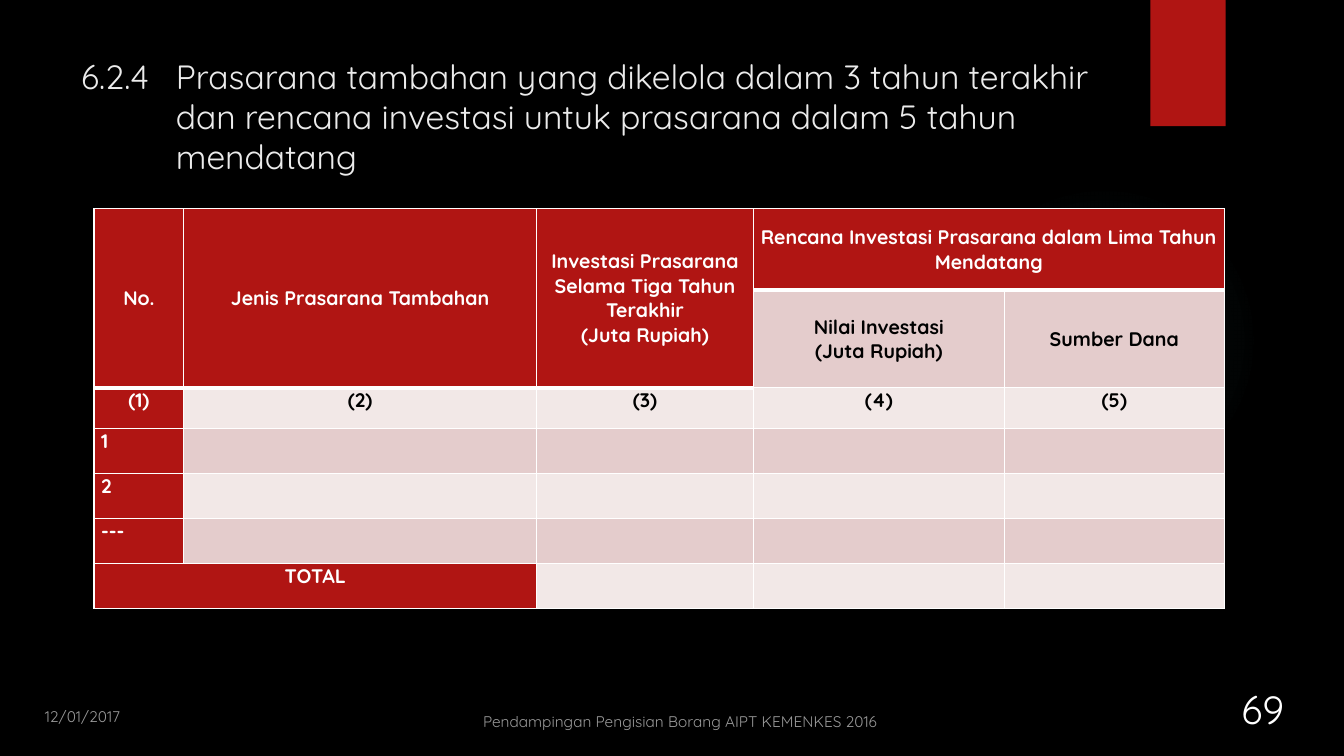
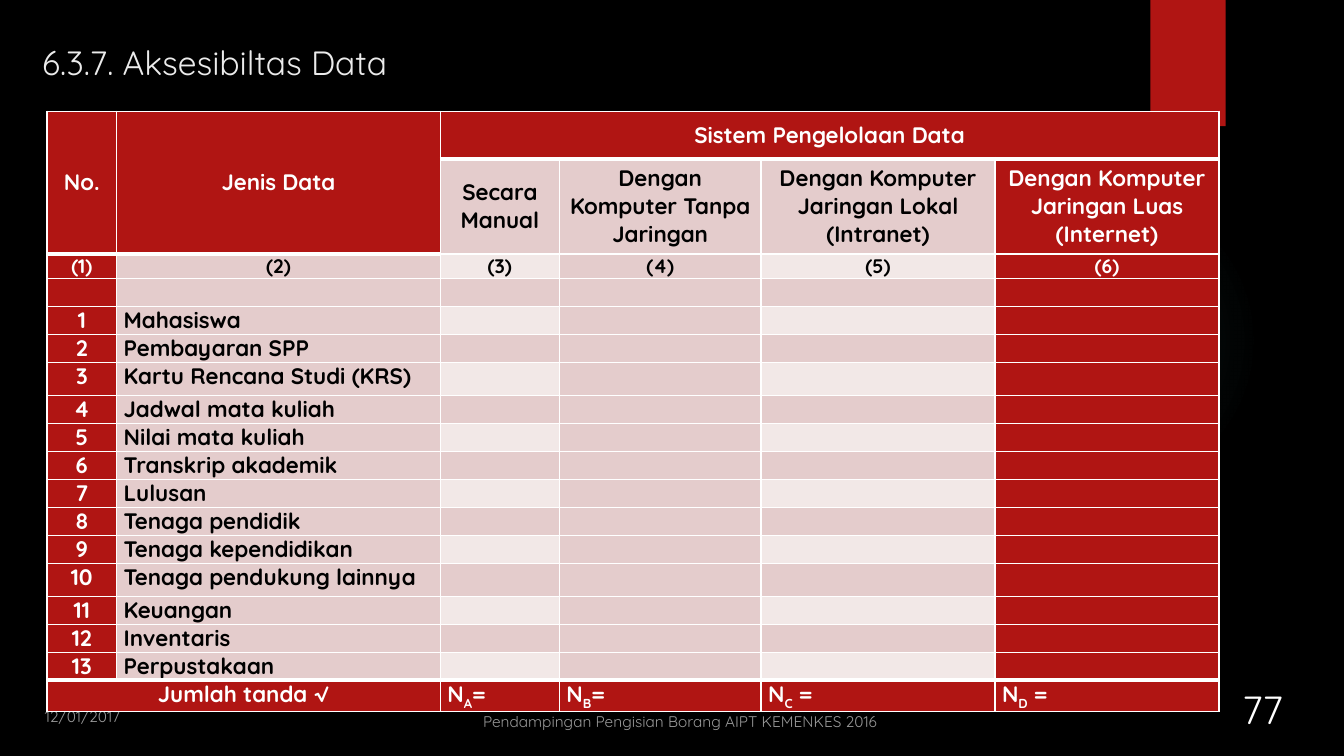
from dataclasses import dataclass

from lxml import etree
from pptx import Presentation
from pptx.dml.color import RGBColor
from pptx.enum.shapes import MSO_SHAPE
from pptx.enum.text import MSO_ANCHOR, PP_ALIGN
from pptx.oxml.ns import qn
from pptx.util import Inches, Pt

RECT, OVAL = MSO_SHAPE.RECTANGLE, MSO_SHAPE.OVAL
TOP, MID, LOW = MSO_ANCHOR.TOP, MSO_ANCHOR.MIDDLE, MSO_ANCHOR.BOTTOM
LEFT, MIDST = PP_ALIGN.LEFT, PP_ALIGN.CENTER
WIDE, TALL = Inches(13.33), Inches(7.5)


@dataclass(frozen=True)
class Theme:
    font: str = "Quicksand"
    back: str = "000000"
    red: str = "B01513"
    rose: str = "E4CCCC"
    pale: str = "F2E8E7"
    white: str = "FFFFFF"
    black: str = "000000"
    head: str = "EBEBEB"
    glow: str = "50B9C1"
    title: int = 24
    page: int = 28
    note: int = 11
    thin: int = 1
    thick: int = 3


LOOK = Theme()


# Lengths are percentages of the slide's size
def across(share):
    return round(WIDE * share / 100)


def down(share):
    return round(TALL * share / 100)


def place(left, top, width, height):
    return across(left), down(top), across(width), down(height)


def node(parent, tag, **attrs):
    item = etree.SubElement(parent, qn(tag))
    for key, value in attrs.items():
        item.set(key, str(value))
    return item


def style(run, size, color, bold=False):
    font = run.font
    font.name, font.size, font.bold = LOOK.font, Pt(size), bold
    font.color.rgb = RGBColor.from_string(color)


# Text boxes and plain shapes
def label(slide, box, text, size, color, anchor=TOP, align=LEFT, alpha=None):
    frame = slide.shapes.add_textbox(*place(*box)).text_frame
    frame.word_wrap, frame.vertical_anchor = True, anchor
    frame.text = text
    para = frame.paragraphs[0]
    para.alignment = align
    for run in para.runs:
        style(run, size, color)
        if alpha:
            tint = run.font.fill._xPr.find(".//" + qn("a:srgbClr"))
            node(tint, "a:alpha", val=alpha * 1000)
    return para


def block(slide, kind, box, color):
    shape = slide.shapes.add_shape(kind, *place(*box))
    shape.shadow.inherit = False
    shape.fill.solid()
    shape.fill.fore_color.rgb = RGBColor.from_string(color)
    shape.line.fill.background()
    return shape


def halo(slide):
    shape = block(slide, OVAL, (70.6, 24.4, 23.1, 41.1), LOOK.glow)
    props = shape._element.spPr
    solid = props.find(qn("a:solidFill"))
    grad = etree.Element(qn("a:gradFill"))
    stops = node(grad, "a:gsLst")
    for spot, alpha in ((0, 7), (36, 6), (69, 0), (100, 0)):
        stop = node(stops, "a:gs", pos=spot * 1000)
        tint = node(stop, "a:srgbClr", val=LOOK.glow)
        node(tint, "a:alpha", val=alpha * 1000)
    node(node(grad, "a:path", path="circle"), "a:fillToRect",
         l=50000, t=50000, r=50000, b=50000)
    props.replace(solid, grad)


# Everything the slides share
def base(deck, title, box, page, hang=0):
    slide = deck.slides.add_slide(deck.slide_layouts[6])
    slide.background.fill.solid()
    slide.background.fill.fore_color.rgb = RGBColor.from_string(LOOK.back)
    halo(slide)
    block(slide, RECT, (85.6, 0, 5.6, 16.7), LOOK.red)
    para = label(slide, box, title, LOOK.title, LOOK.head)
    if hang:
        props = para._p.get_or_add_pPr()
        props.set("marL", str(across(hang)))
        props.set("indent", str(-across(hang)))
    label(slide, (90.5, 86.3, 6.9, 11.2), str(page), LOOK.page, LOOK.white,
          LOW, MIDST)
    label(slide, (35.2, 92.9, 31.7, 4.4),
          "Pendampingan Pengisian Borang AIPT KEMENKES 2016",
          LOOK.note, LOOK.white, LOW, alpha=60)
    label(slide, (2.6, 92.9, 8.1, 4.4), "12/01/2017",
          LOOK.note, LOOK.white, alpha=60)
    return slide


# Table cells
def edge(cell, top, bottom):
    props = cell._tc.get_or_add_tcPr()
    widths = {"L": LOOK.thin, "R": LOOK.thin, "T": top, "B": bottom}
    for side, width in widths.items():
        line = node(props, "a:ln" + side, w=Pt(width))
        node(node(line, "a:solidFill"), "a:srgbClr", val=LOOK.white)


def write(cell, text, size, color, align, anchor):
    cell.margin_left = cell.margin_right = Inches(0.07)
    cell.margin_top = cell.margin_bottom = 0
    cell.vertical_anchor = anchor
    frame = cell.text_frame
    frame.text = text.replace("_", "")
    for para in frame.paragraphs:
        para.alignment = align
        if not para.runs:
            node(para._p, "a:endParaRPr", sz=size * 100)
    # An underscore marks the next letter as a subscript
    if "_" in text:
        stem, rest = text.split("_")
        para = frame.paragraphs[0]
        para.runs[0].text = stem
        para.add_run().text = rest[0]
        para.add_run().text = rest[1:]
        para.runs[1]._r.get_or_add_rPr().set("baseline", "-25000")
    for para in frame.paragraphs:
        for run in para.runs:
            style(run, size, color, True)


def grid(slide, box, cols, rows, data, size, deep, reds, bands, foot, lefts):
    """deep: header rows per column; reds, bands: red and striped columns;
    foot: red cells in the last row; lefts: left-aligned (row, column)s."""
    left, top, width = box
    count, last = len(cols), len(rows) - 1
    table = slide.shapes.add_table(
        len(rows), count, *place(left, top, width, sum(rows))).table
    table.first_row = table.horz_banding = False
    for col, part in zip(table.columns, cols):
        col.width = across(width * part / sum(cols))
    for row, part in zip(table.rows, rows):
        row.height = down(part)
    for r, line in enumerate(data):
        for c in range(count):
            cell = table.cell(r, c)
            text = line[c] if c < len(line) else ""
            rule = foot == count
            above = r == deep[c] or rule and r == last
            below = r < deep[c] or rule and r == last - 1
            edge(cell, LOOK.thick if above else LOOK.thin,
                 LOOK.thick if below else LOOK.thin)
            red = (r < deep[c] or c in reds and r > 0
                   or r == last and c < foot)
            stripe = c in bands and r % 2 == 0
            fill = LOOK.red if red else LOOK.pale if stripe else LOOK.rose
            cell.fill.solid()
            cell.fill.fore_color.rgb = RGBColor.from_string(fill)
            write(cell, text, size[r], LOOK.white if red else LOOK.black,
                  LEFT if (r, c) in lefts else MIDST, MID if r < 2 else TOP)
    # Tall heads, the wide head over the rest, and the foot label
    tall = deep.count(2)
    for c in range(tall):
        table.cell(0, c).merge(table.cell(1, c))
    table.cell(0, tall).merge(table.cell(0, count - 1))
    table.cell(last, 0).merge(table.cell(last, 1))


def marks(count):
    return [f"({n})" for n in range(1, count + 1)]


def assets(deck):
    slide = base(
        deck, "6.2.4\tPrasarana tambahan yang dikelola dalam 3 tahun terakhir "
        "dan rencana investasi untuk prasarana dalam 5 tahun mendatang",
        (5.3, 6.7, 77.2, 18), 69, hang=7.05)
    data = [
        ["No.", "Jenis Prasarana Tambahan",
         "Investasi Prasarana\nSelama Tiga Tahun Terakhir\n(Juta Rupiah)",
         "Rencana Investasi Prasarana dalam Lima Tahun Mendatang"],
        ["", "", "", "Nilai Investasi\n(Juta Rupiah)", "Sumber Dana"],
        marks(5), ["1"], ["2"], ["---"], ["TOTAL"]]
    grid(slide, (7, 27.6, 84.1), [0.89, 3.5, 2.15, 2.49, 2.18],
         [10.8, 12.9, 5.4] + [5.95] * 4, data, [14] * 7,
         deep=[2, 2, 2, 1, 1], reds={0}, bands={1, 2, 3, 4}, foot=2,
         lefts={(r, 0) for r in range(3, 6)})


def access(deck):
    slide = base(deck, "6.3.7. Aksesibiltas Data", (2.4, 4.9, 77.2, 7.6), 77)
    kinds = ["Mahasiswa", "Pembayaran SPP", "Kartu Rencana Studi (KRS)",
             "Jadwal mata kuliah", "Nilai mata kuliah", "Transkrip akademik",
             "Lulusan", "Tenaga pendidik", "Tenaga kependidikan",
             "Tenaga pendukung lainnya", "Keuangan", "Inventaris",
             "Perpustakaan"]
    data = [
        ["No.", "Jenis Data", "Sistem Pengelolaan Data"],
        ["", "", "Secara Manual", "Dengan Komputer Tanpa Jaringan",
         "Dengan Komputer Jaringan Lokal (Intranet)",
         "Dengan Komputer Jaringan Luas (Internet)"],
        marks(6), [],
        *([str(n), kind] for n, kind in enumerate(kinds, 1)),
        ["Jumlah tanda √", "", "N_A=", "N_B=", "N_C =", "N_D ="]]
    last = len(data) - 1
    rows = [6.3, 12.6, 3.24] + [3.7] * (last - 3) + [4.1]
    rows[6] = rows[13] = 4.4
    lefts = {(r, 1) for r in range(4, last)}
    lefts |= {(last, c) for c in range(2, 6)}
    grid(slide, (3.5, 14.7, 87.2), [0.69, 3.21, 1.18, 2, 2.32, 2.22],
         rows, data, [16, 16, 14] + [16] * (last - 2),
         deep=[2, 2, 1, 1, 1, 1], reds={0, 5}, bands={2, 4}, foot=6,
         lefts=lefts)


def main():
    deck = Presentation()
    deck.slide_width, deck.slide_height = WIDE, TALL
    assets(deck)
    access(deck)
    deck.save("out.pptx")


if __name__ == "__main__":
    main()
